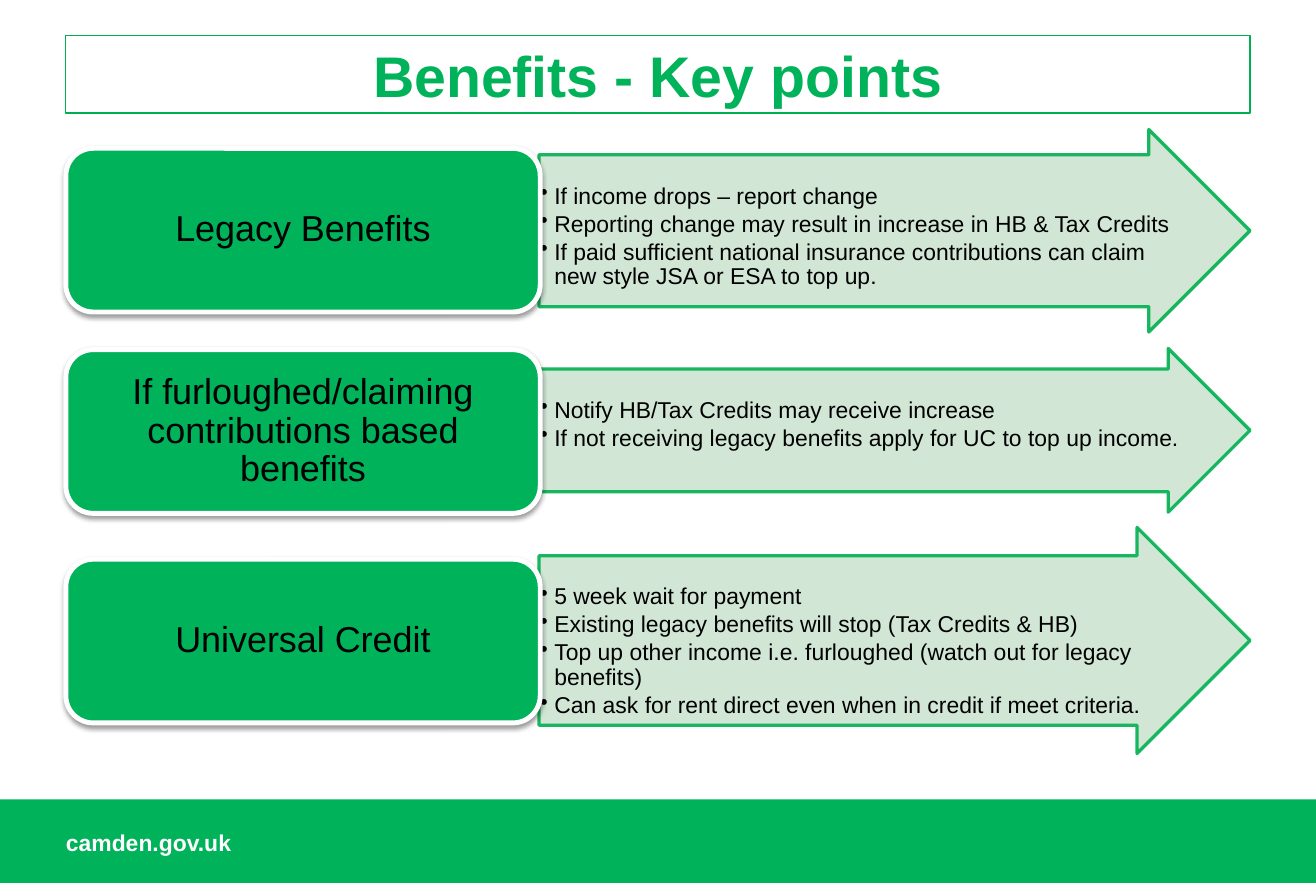
from lxml import etree
from pptx import Presentation
from pptx.dml.color import RGBColor
from pptx.enum.shapes import MSO_SHAPE
from pptx.enum.text import MSO_ANCHOR, PP_ALIGN
from pptx.oxml.ns import qn
from pptx.util import Pt

RECTANGLE = MSO_SHAPE.RECTANGLE
ROUNDED = MSO_SHAPE.ROUNDED_RECTANGLE
ARROW = MSO_SHAPE.RIGHT_ARROW
TOP, MIDDLE = MSO_ANCHOR.TOP, MSO_ANCHOR.MIDDLE
LEFT, CENTER = PP_ALIGN.LEFT, PP_ALIGN.CENTER

PX = 9144
WIDTH, HEIGHT = 1118, 750
MARGIN = 56
CARD_WIDTH, CARD_HEIGHT = 403, 139
ARROW_LEFT, ARROW_WIDTH = 458, 604
FONT = "Arial"
COLORS = {
    "green": "00B259",
    "outline": "00B050",
    "pale": "CCE4D1",
    "white": "FFFFFF",
    "black": "000000",
}
ROWS = [
    ("Legacy Benefits", 126, 110, 172, [
        "If income drops – report change",
        "Reporting change may result in increase in HB & Tax Credits",
        "If paid sufficient national insurance contributions can claim "
        "new style JSA or ESA to top up.",
    ]),
    ("If furloughed/claiming contributions based benefits", 297, 296, 139, [
        "Notify HB/Tax Credits may receive increase",
        "If not receiving legacy benefits apply for UC to top up income.",
    ]),
    ("Universal Credit", 475, 448, 192, [
        "5 week wait for payment",
        "Existing legacy benefits will stop (Tax Credits & HB)",
        "Top up other income i.e. furloughed (watch out for legacy benefits)",
        "Can ask for rent direct even when in credit if meet criteria.",
    ]),
]


def rgb(name):
    """Return the named colour."""
    return RGBColor.from_string(COLORS[name])


def add_box(slide, kind, box, fill=None, line=None, line_width=1):
    """Add a preset shape with no shadow, filled and outlined as asked."""
    shape = slide.shapes.add_shape(kind, *(value * PX for value in box))
    shape.shadow.inherit = False
    if fill:
        shape.fill.solid()
        shape.fill.fore_color.rgb = rgb(fill)
    else:
        shape.fill.background()
    if line:
        shape.line.color.rgb = rgb(line)
        shape.line.width = Pt(line_width)
    else:
        shape.line.fill.background()
    return shape


def write(shape, paragraphs, size, color="black", bold=False, align=LEFT,
          anchor=MIDDLE, insets=(0, 0, 0, 0), spacing=1.0, after=0, bullet_indent=0):
    """Write paragraphs into a shape with one format."""
    frame = shape.text_frame
    frame.word_wrap = True
    frame.vertical_anchor = anchor
    (frame.margin_left, frame.margin_top,
     frame.margin_right, frame.margin_bottom) = (inset * PX for inset in insets)
    for index, text in enumerate(paragraphs):
        paragraph = frame.paragraphs[0] if index == 0 else frame.add_paragraph()
        if bullet_indent:
            properties = paragraph._p.get_or_add_pPr()
            properties.set("marL", str(bullet_indent * PX))
            properties.set("indent", str(-bullet_indent * PX))
            etree.SubElement(properties, qn("a:buChar"), char="•")
        paragraph.alignment = align
        paragraph.line_spacing = spacing
        paragraph.space_after = Pt(after)
        run = paragraph.add_run()
        run.text = text
        run.font.name = FONT
        run.font.size = Pt(size)
        run.font.bold = bold
        run.font.color.rgb = rgb(color)


def set_opacity(shape, percent):
    """Make the fill and outline of a shape partly transparent."""
    for color in shape._element.spPr.iter(qn("a:srgbClr")):
        etree.SubElement(color, qn("a:alpha"), val=str(percent * 1000))


def add_soft_shadow(shape):
    """Give a shape a soft shadow straight below it."""
    effects = shape._element.spPr.find(qn("a:effectLst"))
    shadow = etree.SubElement(effects, qn("a:outerShdw"), blurRad="40000",
                              dist="20000", dir="5400000", rotWithShape="0")
    color = etree.SubElement(shadow, qn("a:srgbClr"), val=COLORS["black"])
    etree.SubElement(color, qn("a:alpha"), val="38000")


def add_title(slide, box):
    """Draw the outlined title."""
    shape = add_box(slide, RECTANGLE, box, line="outline", line_width=0.75)
    write(shape, ["Benefits - Key points"], 35, "green", bold=True, align=CENTER)


def add_footer(slide, box):
    """Draw the footer band and its web address."""
    left, top, width, height = box
    add_box(slide, RECTANGLE, box, fill="green")
    address = slide.shapes.add_textbox(
        *(value * PX for value in (left + MARGIN, top + 25, 461, 24)))
    write(address, ["camden.gov.uk"], 14, "white", bold=True, anchor=TOP)


def add_arrow(slide, box, points):
    """Draw a pale arrow holding bulleted points."""
    arrow = add_box(slide, ARROW, box, "pale", "outline", 2)
    arrow.adjustments[0] = 0.75
    arrow.adjustments[1] = 0.5
    set_opacity(arrow, 90)
    write(arrow, points, 14, anchor=TOP, insets=(1, 25, 1, 1),
          spacing=0.9, after=2, bullet_indent=12)


def add_card(slide, box, heading):
    """Draw a green rounded card with its heading."""
    card = add_box(slide, ROUNDED, box, "green", "white", 3)
    add_soft_shadow(card)
    write(card, [heading], 22, align=CENTER, insets=(16, 11, 16, 11), spacing=0.9)


def main():
    """Build and save the slide."""
    presentation = Presentation()
    presentation.slide_width = WIDTH * PX
    presentation.slide_height = HEIGHT * PX
    slide = presentation.slides.add_slide(presentation.slide_layouts[6])
    add_footer(slide, (0, 679, WIDTH, HEIGHT - 679))
    for heading, card_top, arrow_top, arrow_height, points in ROWS:
        add_arrow(slide, (ARROW_LEFT, arrow_top, ARROW_WIDTH, arrow_height), points)
        add_card(slide, (MARGIN, card_top, CARD_WIDTH, CARD_HEIGHT), heading)
    add_title(slide, (MARGIN, 30, WIDTH - 2 * MARGIN, 66))
    presentation.save("out.pptx")


if __name__ == "__main__":
    main()
